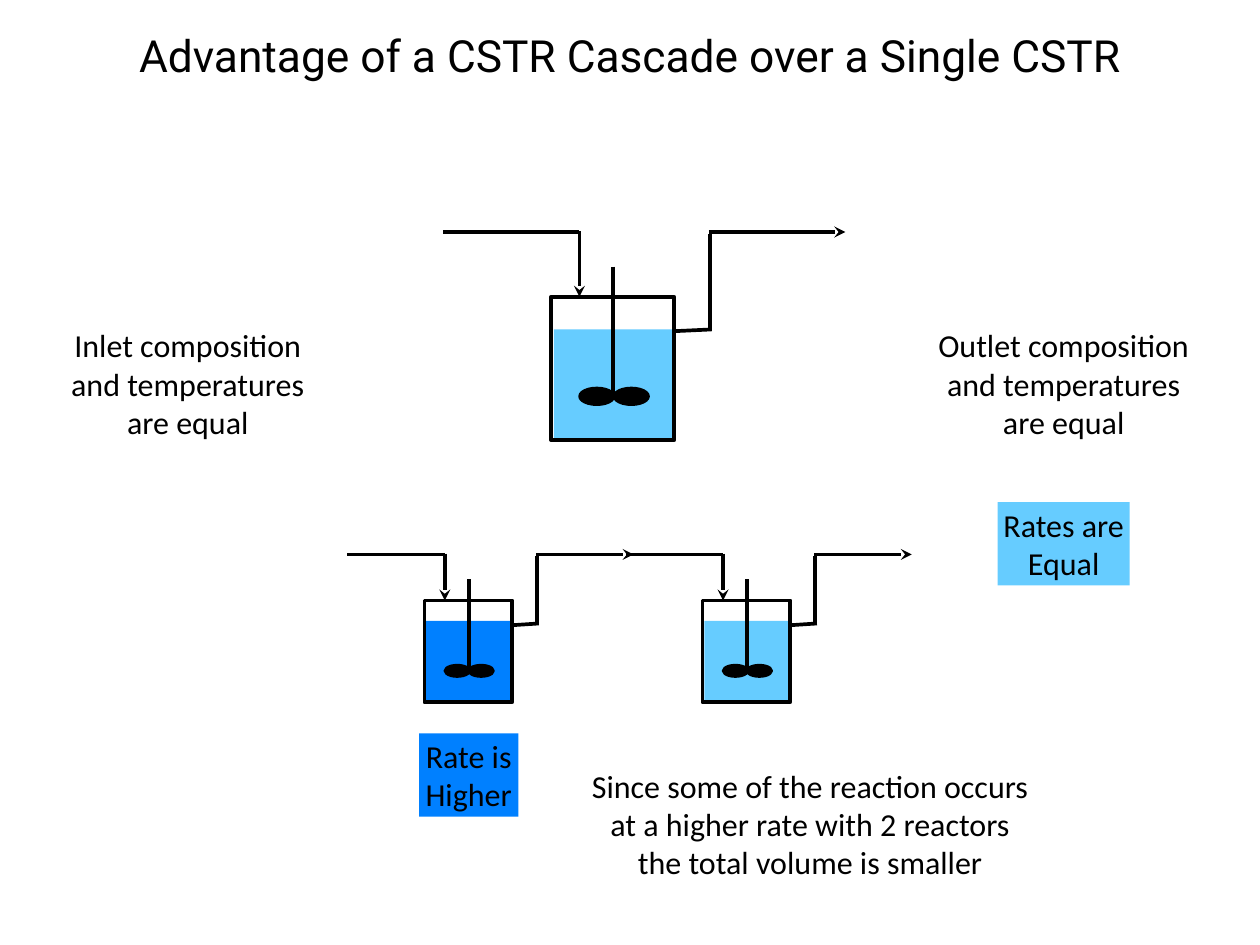
from pptx import Presentation
from pptx import util as u
from pptx.dml.color import RGBColor
from pptx.enum import shapes, text
from pptx.oxml.ns import qn
from lxml import etree

PX = 9144  # 100 px to the inch
COLOURS = {"black": "000000", "light": "66CCFF", "strong": "0080FF"}


def px(length):
    return u.Emu(round(length) * PX)


def colour(name):
    return RGBColor.from_string(COLOURS[name])


def apply_format(target, values):
    for name, value in values.items():
        setattr(target, name, value)


def add_block(slide, kind, box, fill=None, line_width=0):
    shape = slide.shapes.add_shape(kind, *map(px, box))
    shape.shadow.inherit = False
    if fill:
        shape.fill.solid()
        shape.fill.fore_color.rgb = colour(fill)
    else:
        shape.fill.background()
    if line_width:
        shape.line.color.rgb = colour("black")
        shape.line.width = u.Pt(line_width)
    else:
        shape.line.fill.background()
    return shape


def add_pipe(slide, start, end, arrow=False):
    pipe = slide.shapes.add_connector(
        shapes.MSO_CONNECTOR.STRAIGHT, *map(px, (*start, *end)))
    pipe.line.color.rgb = colour("black")
    pipe.line.width = u.Pt(3)
    if arrow:
        etree.SubElement(pipe.line._get_or_add_ln(), qn("a:tailEnd"), type="stealth")
    etree.SubElement(pipe._element.spPr, qn("a:effectLst"))


def write_lines(shape, lines, font_name, size, margin=0, **frame_values):
    frame = shape.text_frame
    margins = {f"margin_{side}": px(margin) for side in ("left", "top", "right", "bottom")}
    apply_format(frame, {**margins, **frame_values})
    for index, line in enumerate(lines):
        paragraph = frame.add_paragraph() if index else frame.paragraphs[0]
        paragraph.alignment = text.PP_ALIGN.CENTER
        run = paragraph.add_run()
        run.text = line
        apply_format(run.font, {"name": font_name, "size": u.Pt(size)})
        run.font.color.rgb = colour("black")


def add_label(slide, box, lines, fill=None):
    if fill:
        shape = add_block(slide, shapes.MSO_SHAPE.RECTANGLE, box, fill)
    else:
        shape = slide.shapes.add_textbox(*map(px, box))
    write_lines(shape, lines, "Calibri", 26, word_wrap=False,
                auto_size=text.MSO_AUTO_SIZE.SHAPE_TO_FIT_TEXT,
                vertical_anchor=text.MSO_ANCHOR.MIDDLE)


def add_reactor(slide, left, top, fill, scale=1.0, level=37):
    """Stirred tank with its pipes; level is the gap above the liquid."""
    def at(x, y):
        return left + x * scale, top + y * scale

    def box(x, y, width, height):
        return (*at(x, y), width * scale, height * scale)

    # Liquid and tank
    rectangle = shapes.MSO_SHAPE.RECTANGLE
    add_block(slide, rectangle, box(3, level, 134, 161 - level), fill)
    add_block(slide, rectangle, box(0, 0, 139, 162), line_width=3)

    # Stirrer
    add_pipe(slide, at(70, -34), at(70, 114))
    for blade_left in (32, 71):
        add_block(slide, shapes.MSO_SHAPE.OVAL, box(blade_left, 103, 39, 19), "black", 2)

    # Inlet, then outlet
    add_pipe(slide, at(-122, -73), at(32, -73))
    add_pipe(slide, at(32, -74), at(32, 0), arrow=True)
    add_pipe(slide, at(138, 39), at(181, 37))
    add_pipe(slide, at(179, 39), at(179, -71))
    add_pipe(slide, at(178, -73), at(332, -73), arrow=True)


def main():
    presentation = Presentation()
    presentation.slide_width = px(1422)
    presentation.slide_height = px(1067)
    slide = presentation.slides.add_slide(presentation.slide_layouts[6])

    # Title
    title = slide.shapes.add_textbox(*map(px, (139, 26, 1144, 139)))
    write_lines(title, ["Advantage of a CSTR Cascade over a Single CSTR"],
                "Roboto", 36, margin=6, word_wrap=True)

    # Single reactor above the cascade of two
    add_reactor(slide, 622, 335, "light")
    for index, fill in enumerate(("strong", "light")):
        add_reactor(slide, 479 + 314 * index, 678, fill, scale=0.71, level=33)

    # Labels
    for left, width, stream in ((1050, 301, "Outlet"), (76, 272, "Inlet")):
        add_label(slide, (left, 365, width, 136),
                  [f"{stream} composition", "and temperatures", "are equal"])
    add_label(slide, (1126, 567, 149, 94), ["Rates are", "Equal"], "light")
    add_label(slide, (473, 828, 112, 94), ["Rate is", "Higher"], "strong")
    add_label(slide, (659, 862, 511, 136),
              ["Since some of the reaction occurs",
               "at a higher rate with 2 reactors",
               "the total volume is smaller"])

    presentation.save("out.pptx")


if __name__ == "__main__":
    main()
